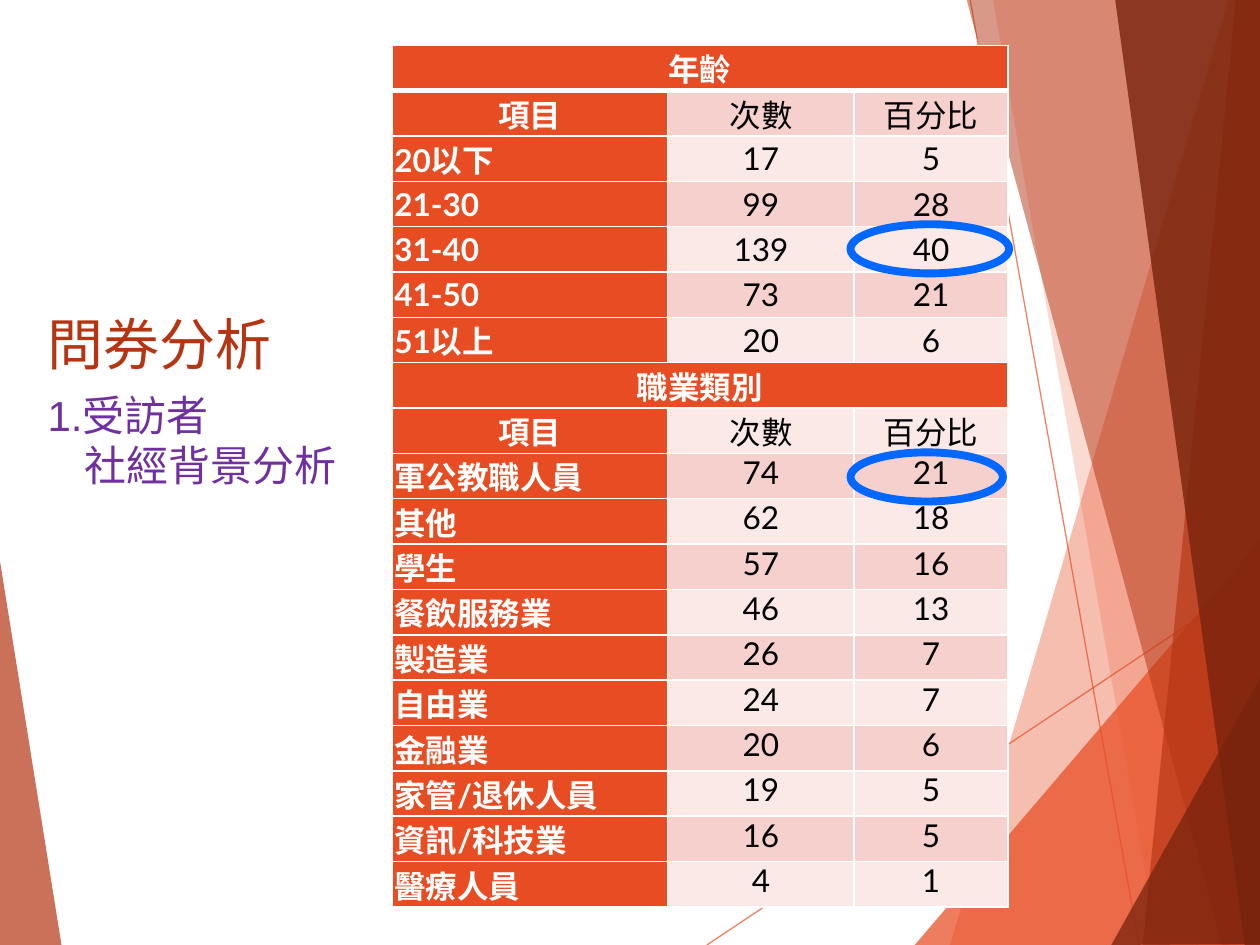
from typing import NamedTuple

from lxml.etree import SubElement
from pptx import Presentation
from pptx.dml.color import RGBColor
from pptx.enum.shapes import MSO_CONNECTOR, MSO_SHAPE
from pptx.enum.text import MSO_ANCHOR, PP_ALIGN
from pptx.oxml import parse_xml
from pptx.oxml.ns import nsdecls, qn
from pptx.slide import Slide
from pptx.table import _Cell
from pptx.util import Inches, Pt

ORANGE = RGBColor(0xE8, 0x4C, 0x22)
RUST = RGBColor(0xB5, 0x35, 0x13)
MAROON = RGBColor(0x78, 0x23, 0x0D)
PURPLE = RGBColor(0x70, 0x30, 0xA0)
BLUE = RGBColor(0x00, 0x67, 0xFF)
WHITE = RGBColor(0xFF, 0xFF, 0xFF)
BLACK = RGBColor(0, 0, 0)
BANDS = (RGBColor(0xFB, 0xE9, 0xE8), RGBColor(0xF6, 0xD0, 0xCD))

ROW_HEIGHT = 0.36
COLUMN_WIDTHS = (2.19, 1.48, 1.22)


class Facet(NamedTuple):
    points: tuple[tuple[float, float], ...]
    color: RGBColor
    opacity: int


class Ray(NamedTuple):
    start: tuple[float, float]
    end: tuple[float, float]


class Caption(NamedTuple):
    lines: tuple[str, ...]
    top: float
    height: float
    size: int
    font: str
    color: RGBColor
    anchor: MSO_ANCHOR
    space_before: int = 0
    hanging: float = 0


class Ring(NamedTuple):
    left: float
    top: float
    width: float
    height: float


class Section(NamedTuple):
    heading: str
    anchor: MSO_ANCHOR
    entries: tuple[tuple[str, int, int], ...]


RAYS = (Ray((5.61, 7.5), (10.01, 4.57)), Ray((7.7, 0), (9.04, 7.5)))

FACETS = (
    Facet(((9.75, 0), (7.54, 7.5), (10.02, 7.51), (10.01, 0.01)), ORANGE, 36),
    Facet(((7.88, -0.01), (9.19, 7.5), (10.01, 7.5), (10.01, -0.01)), ORANGE, 20),
    Facet(((7.26, 7.5), (10, 4.29), (10.01, 7.5)), ORANGE, 72),
    Facet(((7.67, -0.01), (9.7, 7.5), (10.01, 7.49), (10.01, -0.01)), RUST, 50),
    Facet(((9.81, -0.01), (9.07, 7.5), (10.01, 7.5), (10, -0.01)), RUST, 66),
    Facet(((8.85, -0.01), (9.88, 7.5), (10.02, 7.5), (10, -0.01)), MAROON, 80),
    Facet(((8.82, 7.5), (10.02, 5.35), (10.02, 7.49)), MAROON, 76),
    Facet(((-0.01, 4.39), (0.49, 7.51), (-0.01, 7.5)), RUST, 70),
)

CAPTIONS = (
    Caption(("問券分析",), 1.64, 1.4, 32, "Lato", RUST, MSO_ANCHOR.BOTTOM),
    Caption(("1.受訪者", "社經背景分析"), 3.04, 2.83, 24, "Arial", PURPLE,
            MSO_ANCHOR.TOP, 10, 0.29),
)

SECTIONS = (
    Section("年齡", MSO_ANCHOR.MIDDLE, (
        ("20以下", 17, 5), ("21-30", 99, 28), ("31-40", 139, 40),
        ("41-50", 73, 21), ("51以上", 20, 6),
    )),
    Section("職業類別", MSO_ANCHOR.TOP, (
        ("軍公教職人員", 74, 21), ("其他", 62, 18), ("學生", 57, 16),
        ("餐飲服務業", 46, 13), ("製造業", 26, 7), ("自由業", 24, 7),
        ("金融業", 20, 6), ("家管/退休人員", 19, 5), ("資訊/科技業", 16, 5),
        ("醫療人員", 4, 1),
    )),
)

RINGS = (Ring(6.75, 1.78, 1.26, 0.39), Ring(6.75, 3.59, 1.21, 0.39))


def set_opacity(fill_parent, percent: int) -> None:
    color = next(fill_parent.iter(qn("a:srgbClr")))
    SubElement(color, qn("a:alpha")).set("val", str(percent * 1000))


def draw_ray(slide: Slide, ray: Ray) -> None:
    connector = slide.shapes.add_connector(
        MSO_CONNECTOR.STRAIGHT, *map(Inches, ray.start + ray.end))
    connector.line.color.rgb = ORANGE
    connector.line.width = Pt(0.75)
    properties = connector._element.spPr
    set_opacity(properties, 70)
    SubElement(properties, qn("a:effectLst"))


def draw_facet(slide: Slide, facet: Facet) -> None:
    corners = [(Inches(x), Inches(y)) for x, y in facet.points]
    builder = slide.shapes.build_freeform(*corners[0], scale=1.0)
    builder.add_line_segments(corners[1:], close=True)
    outline = builder.convert_to_shape()
    outline.shadow.inherit = False
    outline.fill.solid()
    outline.fill.fore_color.rgb = facet.color
    set_opacity(outline._element.spPr, facet.opacity)
    outline.line.fill.background()


def draw_caption(slide: Slide, caption: Caption) -> None:
    box = slide.shapes.add_textbox(
        Inches(0.28), Inches(caption.top), Inches(3.05), Inches(caption.height))
    frame = box.text_frame
    frame.word_wrap = True
    frame.vertical_anchor = caption.anchor
    paragraph = frame.paragraphs[0]
    paragraph.space_before = Pt(caption.space_before)
    if caption.hanging:
        indent = Inches(caption.hanging)
        properties = paragraph._p.get_or_add_pPr()
        properties.set("marL", str(indent))
        properties.set("indent", str(-indent))
    for index, line in enumerate(caption.lines):
        if index:
            paragraph.add_line_break()
        run = paragraph.add_run()
        run.text = line
        run.font.size = Pt(caption.size)
        run.font.name = caption.font
        run.font.color.rgb = caption.color


def set_borders(cell: _Cell, top: int, bottom: int) -> None:
    properties = cell._tc.get_or_add_tcPr()
    widths = {"lnL": 1, "lnR": 1, "lnT": top, "lnB": bottom}
    for index, (side, width) in enumerate(widths.items()):
        properties.insert(index, parse_xml(
            f'<a:{side} {nsdecls("a")} w="{Pt(width)}"><a:solidFill>'
            f'<a:srgbClr val="{WHITE}"/></a:solidFill></a:{side}>'))


def fill_cell(cell: _Cell, text: str, fill: RGBColor, header: bool,
              align: PP_ALIGN, anchor: MSO_ANCHOR) -> None:
    cell.fill.solid()
    cell.fill.fore_color.rgb = fill
    cell.vertical_anchor = anchor
    cell.margin_left = cell.margin_right = Inches(0.02)
    cell.margin_top = cell.margin_bottom = 0
    paragraph = cell.text_frame.paragraphs[0]
    paragraph.alignment = align
    if text:
        run = paragraph.add_run()
        run.text = text
        run.font.size = Pt(18)
        run.font.name = "Lato"
        run.font.bold = header
        run.font.color.rgb = WHITE if header else BLACK


def draw_survey(slide: Slide, sections: tuple[Section, ...]) -> None:
    rows = [(values, section.anchor) for section in sections for values in (
        (section.heading, "", ""), ("項目", "次數", "百分比"), *section.entries)]
    survey = slide.shapes.add_table(
        len(rows), len(COLUMN_WIDTHS), Inches(3.11), Inches(0.36),
        Inches(sum(COLUMN_WIDTHS)), Inches(ROW_HEIGHT * len(rows))).table
    survey.first_row = survey.horz_banding = False
    for column, width in zip(survey.columns, COLUMN_WIDTHS):
        column.width = Inches(width)
    for r, (values, anchor) in enumerate(rows):
        survey.rows[r].height = Inches(ROW_HEIGHT)
        heading = values[1] == ""
        for c, value in enumerate(values):
            header = heading or c == 0
            entry_label = c == 0 and isinstance(values[1], int)
            cell = survey.cell(r, c)
            fill_cell(cell, str(value), ORANGE if header else BANDS[r % 2], header,
                      PP_ALIGN.LEFT if entry_label else PP_ALIGN.CENTER, anchor)
            set_borders(cell, 3 if r == 1 else 1, 3 if r == 0 else 1)
        if heading:
            survey.cell(r, 0).merge(survey.cell(r, len(values) - 1))


def draw_ring(slide: Slide, ring: Ring) -> None:
    ellipse = slide.shapes.add_shape(MSO_SHAPE.OVAL, *map(Inches, ring))
    ellipse.shadow.inherit = False
    ellipse.fill.background()
    ellipse.line.color.rgb = BLUE
    ellipse.line.width = Pt(4.5)


def main() -> None:
    deck = Presentation()
    deck.slide_width, deck.slide_height = Inches(10), Inches(7.5)
    slide = deck.slides.add_slide(deck.slide_layouts[6])
    for ray in RAYS:
        draw_ray(slide, ray)
    for facet in FACETS:
        draw_facet(slide, facet)
    for caption in CAPTIONS:
        draw_caption(slide, caption)
    draw_survey(slide, SECTIONS)
    for ring in RINGS:
        draw_ring(slide, ring)
    deck.save("out.pptx")


if __name__ == "__main__":
    main()
